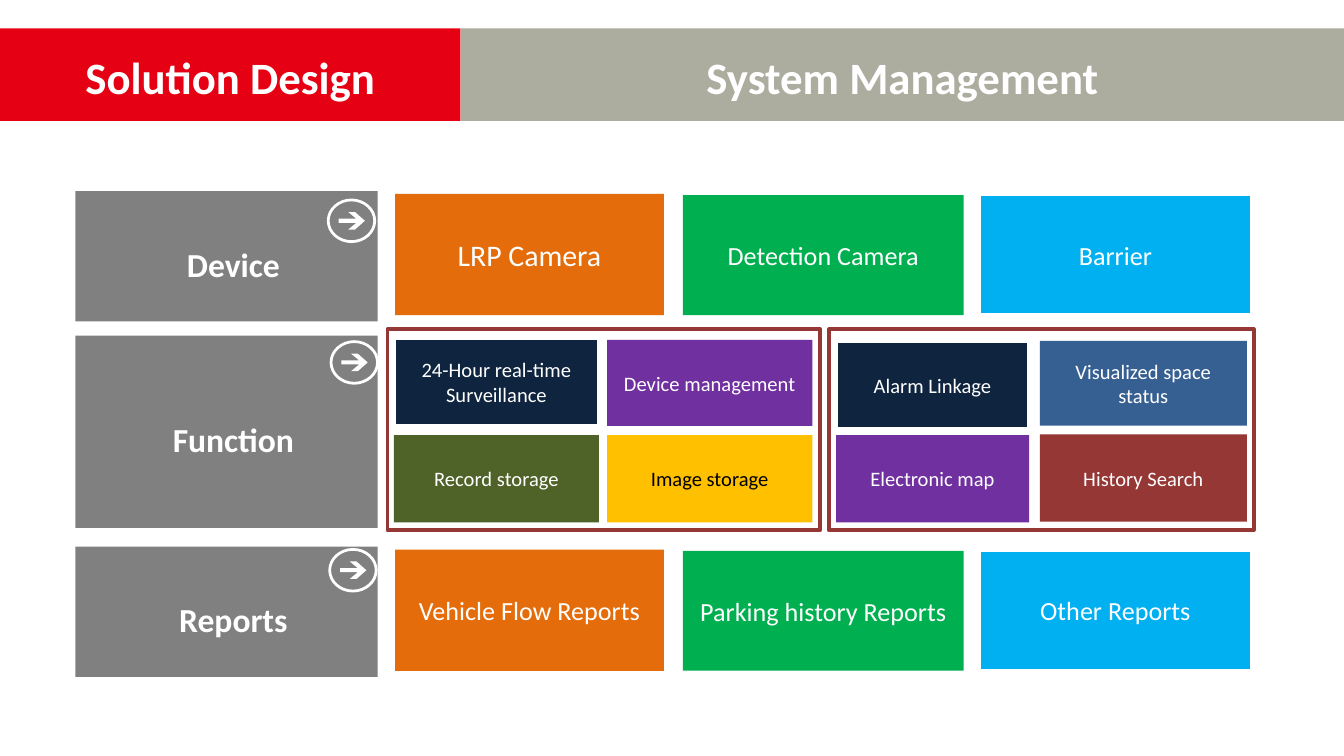
import pptx
import pptx.oxml
import pptx.oxml.ns
import pptx.util
from pptx.dml.color import RGBColor
from pptx.enum.shapes import MSO_SHAPE
from pptx.enum.text import MSO_ANCHOR, PP_ALIGN

Pt = pptx.util.Pt

THEME = {
    "font": "Calibri",
    "white": "FFFFFF", "black": "000000", "red": "E60013", "stone": "ACAC9F",
    "grey": "808080", "orange": "E46C0A", "green": "00B050", "sky": "00B0F0",
    "navy": "0F243E", "purple": "7030A0", "olive": "4F6228", "amber": "FFC000",
    "steel": "376092", "brick": "953735",
    "heading": 24, "label": 18, "large": 16, "body": 14, "small": 11,
    "border": 2,
}

HEADINGS = [
    ("System Management", "stone", 246.7, 473.3),
    ("Solution Design", "red", 0, 246.7),
]
HEADING_TOP, HEADING_HEIGHT, HEADING_TEXT_SHIFT = 15.2, 49.6, 0.8

LABEL_LEFT, LABEL_WIDTH = 40.4, 162
ROWS = [
    ("Device", 102.4, 69.8, (175.1, 106.4),
     [("LRP Camera", "large"), ("Detection Camera", "body"), ("Barrier", "body")]),
    ("Function", 179.8, 103, (176.6, 182.3), []),
    ("Reports", 292.9, 69.8, (175.9, 293.6),
     [("Vehicle Flow Reports", "body"), ("Parking history Reports", "body"),
      ("Other Reports", "body")]),
]
TILE_COLUMNS = [
    ("orange", None, 211.7, 144, 1.5, 65),
    ("green", None, 365.8, 150.5, 2.2, 64.3),
    ("sky", "white", 524.5, 146.2, 1.7, 64.6),
]

FRAME_TOP, FRAME_HEIGHT = 176.4, 107.7
FRAMES = [(207.6, 231.8), (444.2, 227.5)]
FUNCTION_COLUMNS = [
    (211.1, 109.8, [
        ("24-Hour real-time Surveillance", "navy", "white", "white", 181.2, 47),
        ("Record storage", "olive", None, "white", 233.1, 46.8)]),
    (325.2, 110, [
        ("Device management", "purple", None, "white", 182.1, 46.1),
        ("Image storage", "amber", None, "black", 233.1, 46.8)]),
    (447.9, 103.4, [
        ("Alarm Linkage", "navy", "white", "white", 182.8, 47),
        ("Electronic map", "purple", None, "white", 233.1, 46.8)]),
    (557.1, 110.9, [
        ("Visualized space status", "steel", None, "white", 182.7, 45.4),
        ("History Search", "brick", None, "white", 232.7, 46.8)]),
]

ICON_WIDTH, ICON_HEIGHT, RING = 26.4, 23.8, 1.5
ARROW = [(15.8, 10.8), (11.5, 7.2), (15.1, 7.2), (20.4, 11.9), (15.1, 16.6),
         (11.5, 16.6), (15.8, 13), (6.3, 13), (6.3, 10.8)]
BEND = 0.55
ROUND = [(1, 0), (1, BEND), (BEND, 1), (0, 1), (-BEND, 1), (-1, BEND), (-1, 0),
         (-1, -BEND), (-BEND, -1), (0, -1), (BEND, -1), (1, -BEND), (1, 0)]
UNITS = 100


def colour(name):
    return RGBColor.from_string(THEME[name])


def write(box, text, size, ink="white", bold=False):
    frame = box.text_frame
    frame.text = text
    frame.word_wrap = True
    frame.vertical_anchor = MSO_ANCHOR.MIDDLE
    para = frame.paragraphs[0]
    para.alignment = PP_ALIGN.CENTER
    for span in para.runs:
        span.font.name = THEME["font"]
        span.font.size = Pt(THEME[size])
        span.font.bold = bold
        span.font.color.rgb = colour(ink)
    return frame


def rectangle(page, left, top, width, height, fill=None, line=None):
    box = page.shapes.add_shape(
        MSO_SHAPE.RECTANGLE, Pt(left), Pt(top), Pt(width), Pt(height))
    box.shadow.inherit = False
    if fill:
        box.fill.solid()
        box.fill.fore_color.rgb = colour(fill)
    else:
        box.fill.background()
    if line:
        box.line.color.rgb = colour(line)
        box.line.width = Pt(THEME["border"])
    else:
        box.line.fill.background()
    return box


def ellipse(inset):
    middle_x, middle_y = ICON_WIDTH / 2, ICON_HEIGHT / 2
    return [(middle_x + (middle_x - inset) * x, middle_y + (middle_y - inset) * y)
            for x, y in ROUND]


def bend_segments(icon, count):
    segments = list(icon.element.iter(pptx.oxml.ns.qn("a:lnTo")))[:count]
    for first in range(0, count, 3):
        curve = pptx.oxml.parse_xml(
            f"<a:cubicBezTo {pptx.oxml.ns.nsdecls('a')}/>")
        segments[first].addprevious(curve)
        for segment in segments[first:first + 3]:
            curve.append(segment[0])
            segment.getparent().remove(segment)


def arrow_icon(page, left, top):
    contours = [[(x * UNITS, y * UNITS) for x, y in contour]
                for contour in (ellipse(0), ellipse(RING), ARROW)]
    builder = page.shapes.build_freeform(*contours[0][0], scale=Pt(1) / UNITS)
    for index, contour in enumerate(contours):
        if index:
            builder.move_to(*contour[0])
        builder.add_line_segments(contour[1:], close=True)
    icon = builder.convert_to_shape(Pt(left), Pt(top))
    bend_segments(icon, 2 * (len(ROUND) - 1))
    icon.shadow.inherit = False
    icon.fill.solid()
    icon.fill.fore_color.rgb = colour("white")
    icon.line.fill.background()


def add_headings(page):
    for text, fill, left, width in HEADINGS:
        rectangle(page, left, HEADING_TOP, width, HEADING_HEIGHT, fill)
    for text, fill, left, width in HEADINGS:
        box = page.shapes.add_textbox(
            Pt(left), Pt(HEADING_TOP + HEADING_TEXT_SHIFT), Pt(width), Pt(HEADING_HEIGHT))
        write(box, text, "heading", bold=True)


def add_rows(page):
    for label, top, height, icon, tiles in ROWS:
        box = rectangle(page, LABEL_LEFT, top, LABEL_WIDTH, height, "grey")
        frame = write(box, label, "label", bold=True)
        frame.margin_left = frame.margin_top = Pt(14.4)
        frame.paragraphs[0].line_spacing = 0.9
        for (text, size), column in zip(tiles, TILE_COLUMNS):
            fill, line, left, width, drop, tile_height = column
            tile = rectangle(page, left, top + drop, width, tile_height, fill, line)
            write(tile, text, size)
        arrow_icon(page, *icon)


def add_functions(page):
    for left, width, tiles in FUNCTION_COLUMNS:
        for text, fill, line, ink, top, height in tiles:
            tile = rectangle(page, left, top, width, height, fill, line)
            write(tile, text, "small", ink)
    for left, width in FRAMES:
        rectangle(page, left, FRAME_TOP, width, FRAME_HEIGHT, line="brick")


def main():
    deck = pptx.Presentation()
    deck.slide_width, deck.slide_height = Pt(720), Pt(405)
    page = deck.slides.add_slide(deck.slide_layouts[6])
    add_headings(page)
    add_rows(page)
    add_functions(page)
    deck.save("out.pptx")


if __name__ == "__main__":
    main()
